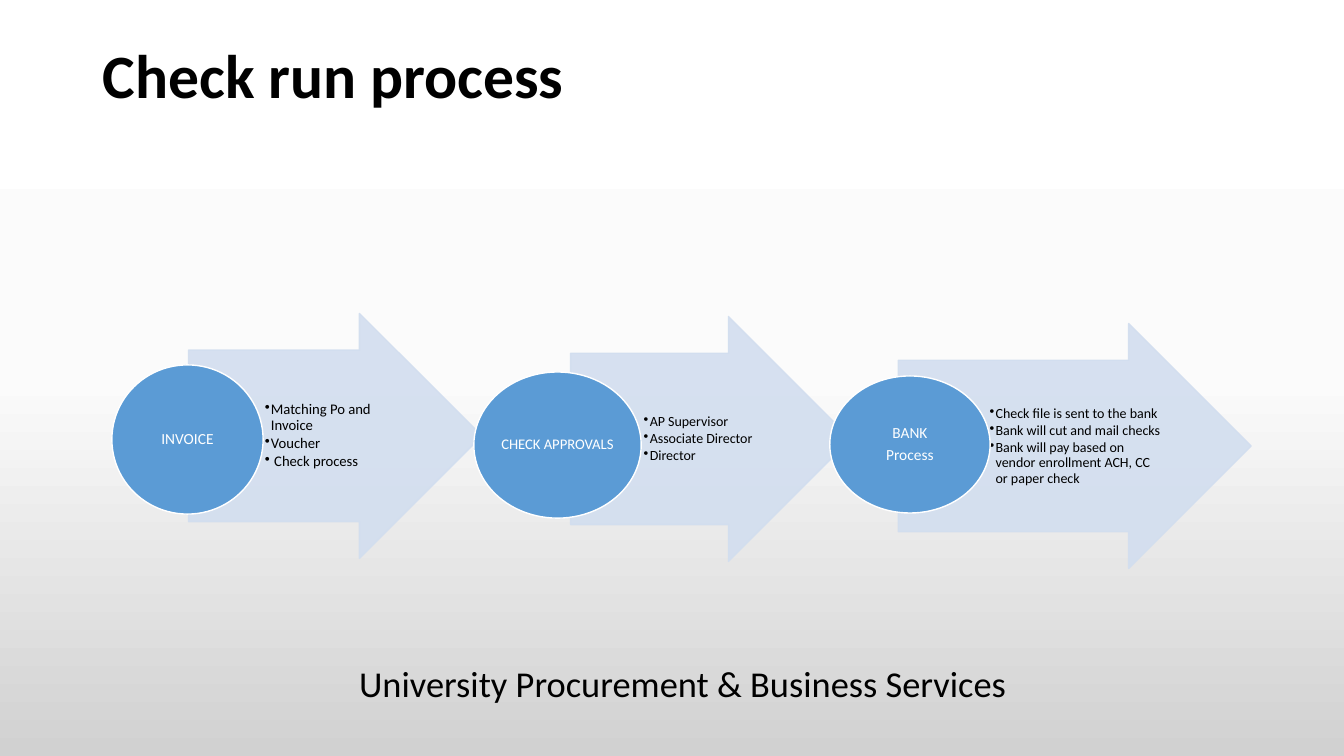
from copy import deepcopy
from dataclasses import dataclass

from lxml import etree
from pptx import Presentation
from pptx.dml.color import RGBColor
from pptx.enum import shapes, text
from pptx.oxml import ns
from pptx.util import Inches, Pt


@dataclass(frozen=True)
class Theme:
    font: str = "Calibri"
    ink: str = "000000"
    light: str = "FFFFFF"
    circle: str = "5B9BD5"
    arrow: str = "D2DEEF"
    arrow_opacity: int = 90
    backdrop: tuple = ((0, "FFFFFF"), (0.5, "FBFBFB"), (1, "D1D1D1"))
    title_size: float = 44
    footer_size: float = 26


@dataclass(frozen=True)
class Step:
    arrow: tuple
    circle: tuple
    label: list
    label_size: float
    tasks: list
    task_size: float
    task_width: float


THEME = Theme()

STEPS = [
    Step((1.87, 3.11, 2.91, 2.43), (1.11, 3.62, 1.5, 1.48), ["INVOICE"], 11,
         ["Matching Po and Invoice", "Voucher", " Check process"], 10.5, 1.42),
    Step((5.66, 3.14, 2.78, 2.43), (4.7, 3.69, 1.66, 1.45), ["CHECK APPROVALS"], 10.5,
         ["AP Supervisor", "Associate Director", "Director"], 10, 1.36),
    Step((8.91, 3.21, 3.5, 2.43), (8.23, 3.73, 1.59, 1.36), ["BANK", "Process"], 11,
         ["Check file is sent to the bank", "Bank will cut and mail checks",
          "Bank will pay based on vendor enrollment ACH, CC or paper check"], 10, 1.78),
]


def lengths(box):
    return [Inches(value) for value in box]


def paint_background(page):
    fill = page.background.fill
    fill.gradient()
    fill.gradient_angle = 270
    stop_list = page.element.xpath(".//p:bg//a:gsLst")[0]
    stop_list.append(deepcopy(stop_list[-1]))
    for stop, (position, color) in zip(fill.gradient_stops, THEME.backdrop):
        stop.position = position
        stop.color.rgb = RGBColor.from_string(color)


def set_frame(frame, anchor, margins):
    """Wrap the text and set its anchor and left, top, right, bottom margins."""
    frame.word_wrap = True
    frame.vertical_anchor = anchor
    (frame.margin_left, frame.margin_top,
     frame.margin_right, frame.margin_bottom) = lengths(margins)


def write(frame, lines, size, color, align=text.PP_ALIGN.LEFT, bold=False,
          spacing=1, after=0, bullet=False):
    """Fill the frame, one paragraph a line; after is a share of the type size."""
    for index, line in enumerate(lines):
        para = frame.paragraphs[0] if index == 0 else frame.add_paragraph()
        para.text = line
        para.alignment = align
        para.line_spacing = spacing
        para.space_after = Pt(size * after)
        if bullet:
            props = para._p.get_or_add_pPr()
            props.set("marL", str(Inches(0.06)))
            props.set("indent", str(-Inches(0.06)))
            etree.SubElement(props, ns.qn("a:buChar")).set("char", "•")
        para.font.name = THEME.font
        para.font.size = Pt(size)
        para.font.bold = bold
        para.font.color.rgb = RGBColor.from_string(color)


def add_text(page, box, lines, size, anchor=text.MSO_ANCHOR.TOP,
             margins=(0.1, 0.05, 0.1, 0.05), **style):
    frame = page.shapes.add_textbox(*lengths(box)).text_frame
    set_frame(frame, anchor, margins)
    write(frame, lines, size, THEME.ink, **style)


def add_figure(page, kind, box, fill, line):
    figure = page.shapes.add_shape(kind, *lengths(box))
    figure.shadow.inherit = False
    figure.fill.solid()
    figure.fill.fore_color.rgb = RGBColor.from_string(fill)
    figure.line.color.rgb = RGBColor.from_string(line)
    figure.line.width = Pt(1)
    return figure


def add_arrow(page, box):
    arrow = add_figure(page, shapes.MSO_SHAPE.RIGHT_ARROW, box, THEME.arrow, THEME.arrow)
    arrow.adjustments[0] = 0.7
    arrow.adjustments[1] = 0.5
    for color in arrow.element.xpath("./p:spPr//a:srgbClr"):
        alpha = etree.SubElement(color, ns.qn("a:alpha"))
        alpha.set("val", str(THEME.arrow_opacity * 1000))


def add_step(page, step):
    """Draw the arrow, its tasks inside the shaft, and the labelled circle."""
    add_arrow(page, step.arrow)
    left, top, width, height = step.arrow
    shaft = (left + width / 4, top + height * 0.15, step.task_width, height * 0.7)
    add_text(page, shaft, step.tasks, step.task_size, text.MSO_ANCHOR.MIDDLE,
             (0.03, 0.01, 0.01, 0.01), spacing=0.9, after=0.15, bullet=True)
    circle = add_figure(page, shapes.MSO_SHAPE.OVAL, step.circle, THEME.circle, THEME.light)
    set_frame(circle.text_frame, text.MSO_ANCHOR.MIDDLE, (0.01,) * 4)
    write(circle.text_frame, step.label, step.label_size, THEME.light,
          text.PP_ALIGN.CENTER, spacing=0.9, after=0.35)


def main():
    deck = Presentation()
    deck.slide_width, deck.slide_height = Inches(13.33), Inches(7.5)
    page = deck.slides.add_slide(deck.slide_layouts[6])
    paint_background(page)
    add_text(page, (3.44, 6.51, 6.67, 0.54), ["University Procurement & Business Services"],
             THEME.footer_size, align=text.PP_ALIGN.CENTER)
    add_text(page, (0.92, 0.4, 11.5, 1.45), ["Check run process"],
             THEME.title_size, bold=True, spacing=0.9)
    for step in STEPS:
        add_step(page, step)
    deck.save("out.pptx")


if __name__ == "__main__":
    main()
